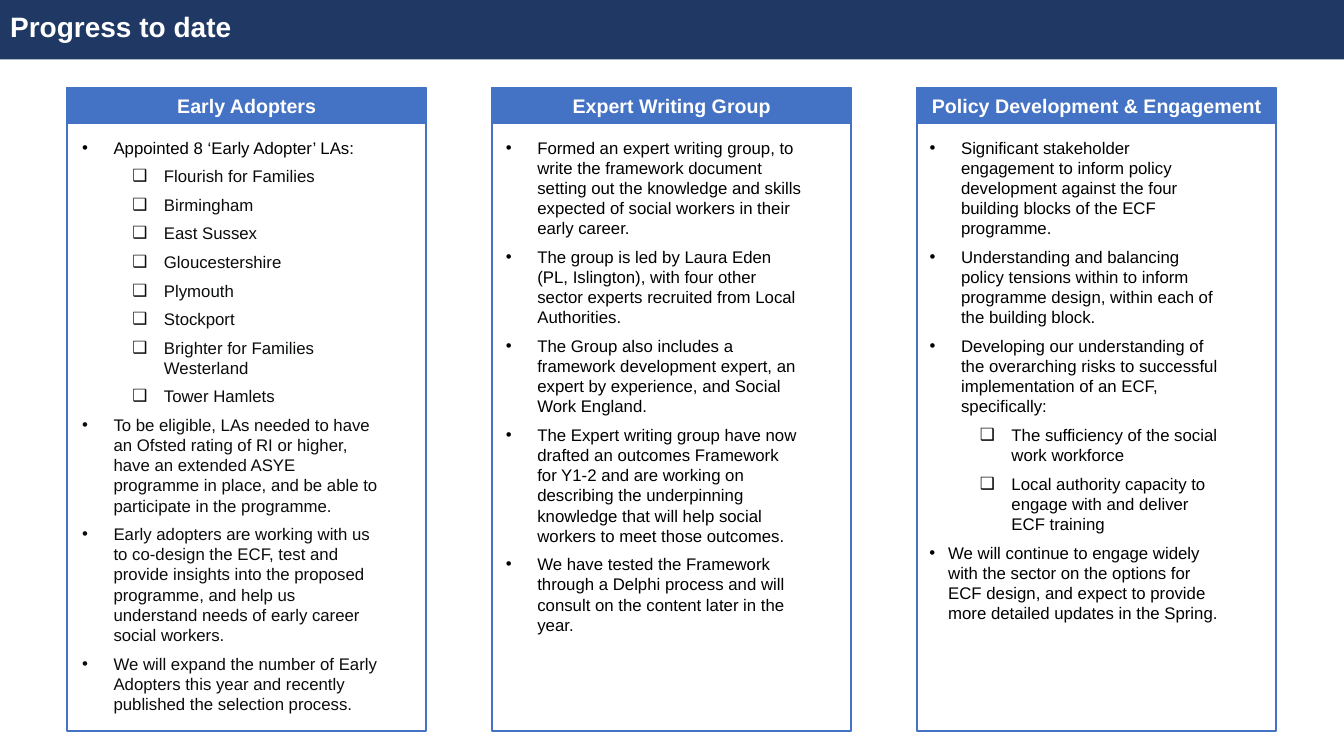
from dataclasses import dataclass

from lxml.etree import SubElement
from pptx import Presentation
from pptx.dml.color import RGBColor
from pptx.enum.shapes import MSO_SHAPE
from pptx.enum.text import MSO_ANCHOR, MSO_AUTO_SIZE, PP_ALIGN
from pptx.oxml.ns import qn
from pptx.slide import Slide
from pptx.util import Pt

POINT, TICK, CLOSING = (1, "•", 38, 22.5), (2, "❑", 74, 22.5), (1, "•", 28.8, 13.5)

COLUMNS = [
    ("Early Adopters", "0B0C0C", [
        (POINT, "Appointed 8 ‘Early Adopter’ LAs:"),
        (TICK, "Flourish for Families"),
        (TICK, "Birmingham"),
        (TICK, "East Sussex"),
        (TICK, "Gloucestershire"),
        (TICK, "Plymouth"),
        (TICK, "Stockport"),
        (TICK, "Brighter for Families Westerland"),
        (TICK, "Tower Hamlets"),
        (POINT, "To be eligible, LAs needed to have an Ofsted rating of RI or higher, have an "
                "extended ASYE programme in place, and be able to participate in the programme."),
        (POINT, "Early adopters are working with us to co-design the ECF, test and provide "
                "insights into the proposed programme, and help us understand needs of early "
                "career social workers."),
        (POINT, "We will expand the number of Early Adopters this year and recently published "
                "the selection process."),
    ]),
    ("Expert Writing Group", "000000", [
        (POINT, "Formed an expert writing group, to write the framework document setting out "
                "the knowledge and skills expected of social workers in their early career."),
        (POINT, "The group is led by Laura Eden (PL, Islington), with four other sector experts "
                "recruited from Local Authorities."),
        (POINT, "The Group also includes a framework development expert, an expert by "
                "experience, and Social Work England."),
        (POINT, "The Expert writing group have now drafted an outcomes Framework for Y1-2 and "
                "are working on describing the underpinning knowledge that will help social "
                "workers to meet those outcomes."),
        (POINT, "We have tested the Framework through a Delphi process and will consult on the "
                "content later in the year."),
    ]),
    ("Policy Development & Engagement", "000000", [
        (POINT, "Significant stakeholder engagement to inform policy development against the "
                "four building blocks of the ECF programme."),
        (POINT, "Understanding and balancing policy tensions within to inform programme design, "
                "within each of the building block."),
        (POINT, "Developing our understanding of the overarching risks to successful "
                "implementation of an ECF, specifically:"),
        (TICK, "The sufficiency of the social work workforce"),
        (TICK, "Local authority capacity to engage with and deliver ECF training"),
        (CLOSING, "We will continue to engage widely with the sector on the options for ECF "
                  "design, and expect to provide more detailed updates in the Spring."),
    ]),
]


def paint(target, colour):
    if hasattr(target, "solid"):
        target.solid()
        target = target.fore_color
    target.rgb = RGBColor.from_string(colour)


def write(paragraph, text, font="Arial", size=12, colour="000000", bold=False,
          align=PP_ALIGN.LEFT):
    paragraph.alignment = align
    run = paragraph.add_run()
    run.text = text
    run.font.name, run.font.size, run.font.bold = font, Pt(size), bold
    paint(run.font.fill, colour)


@dataclass
class Deck:
    slide: Slide
    navy: str = "203864"
    blue: str = "4472C4"
    white: str = "FFFFFF"
    font: str = "Arial"

    def title(self, text, left, top, width, height):
        banner = self.slide.shapes.title
        banner.left, banner.top, banner.width, banner.height = map(Pt, (left, top, width, height))
        paint(banner.fill, self.navy)
        frame = banner.text_frame
        frame.auto_size = MSO_AUTO_SIZE.NONE
        frame.vertical_anchor = MSO_ANCHOR.MIDDLE
        write(frame.paragraphs[0], text, self.font, size=20, colour=self.white, bold=True)

    def panel(self, left, top, width, height, heading=None):
        box = self.slide.shapes.add_shape(MSO_SHAPE.RECTANGLE, *map(Pt, (left, top, width, height)))
        box.shadow.inherit = False
        paint(box.line.fill, self.blue)
        box.line.width = Pt(1.5)
        if heading is None:
            box.fill.background()
            return
        paint(box.fill, self.blue)
        frame = box.text_frame
        frame.word_wrap = False
        frame.vertical_anchor = MSO_ANCHOR.MIDDLE
        write(frame.paragraphs[0], heading, self.font, size=14, colour=self.white, bold=True,
              align=PP_ALIGN.CENTER)

    def bullets(self, items, colour, left, top, width, height):
        frame = self.slide.shapes.add_textbox(*map(Pt, (left, top, width, height))).text_frame
        frame.word_wrap = True
        for index, ((level, mark, margin, hanging), text) in enumerate(items):
            paragraph = frame.add_paragraph() if index else frame.paragraphs[0]
            write(paragraph, text, self.font, colour=colour if index else "000000")
            paragraph.level = level
            paragraph.space_after = Pt(6)
            properties = paragraph._p.get_or_add_pPr()
            properties.set("marL", str(Pt(margin)))
            properties.set("indent", str(-Pt(hanging)))
            SubElement(properties, qn("a:buFont")).set("typeface", self.font)
            SubElement(properties, qn("a:buChar")).set("char", mark)


def main():
    presentation = Presentation()
    presentation.slide_width, presentation.slide_height = Pt(960), Pt(540)
    deck = Deck(presentation.slides.add_slide(presentation.slide_layouts[5]))
    deck.title("Progress to date", 0, -4.3, 960, 46.8)
    for index, (heading, colour, items) in enumerate(COLUMNS):
        left = 48 + 303.6 * index
        deck.panel(left, 62.7, 256.5, 459.3)
        deck.panel(left, 62.7, 256.5, 25.5, heading)
        deck.bullets(items, colour, 36 + 302.7 * index, 94.6, 241.2, 440)
    presentation.save("out.pptx")


if __name__ == "__main__":
    main()
